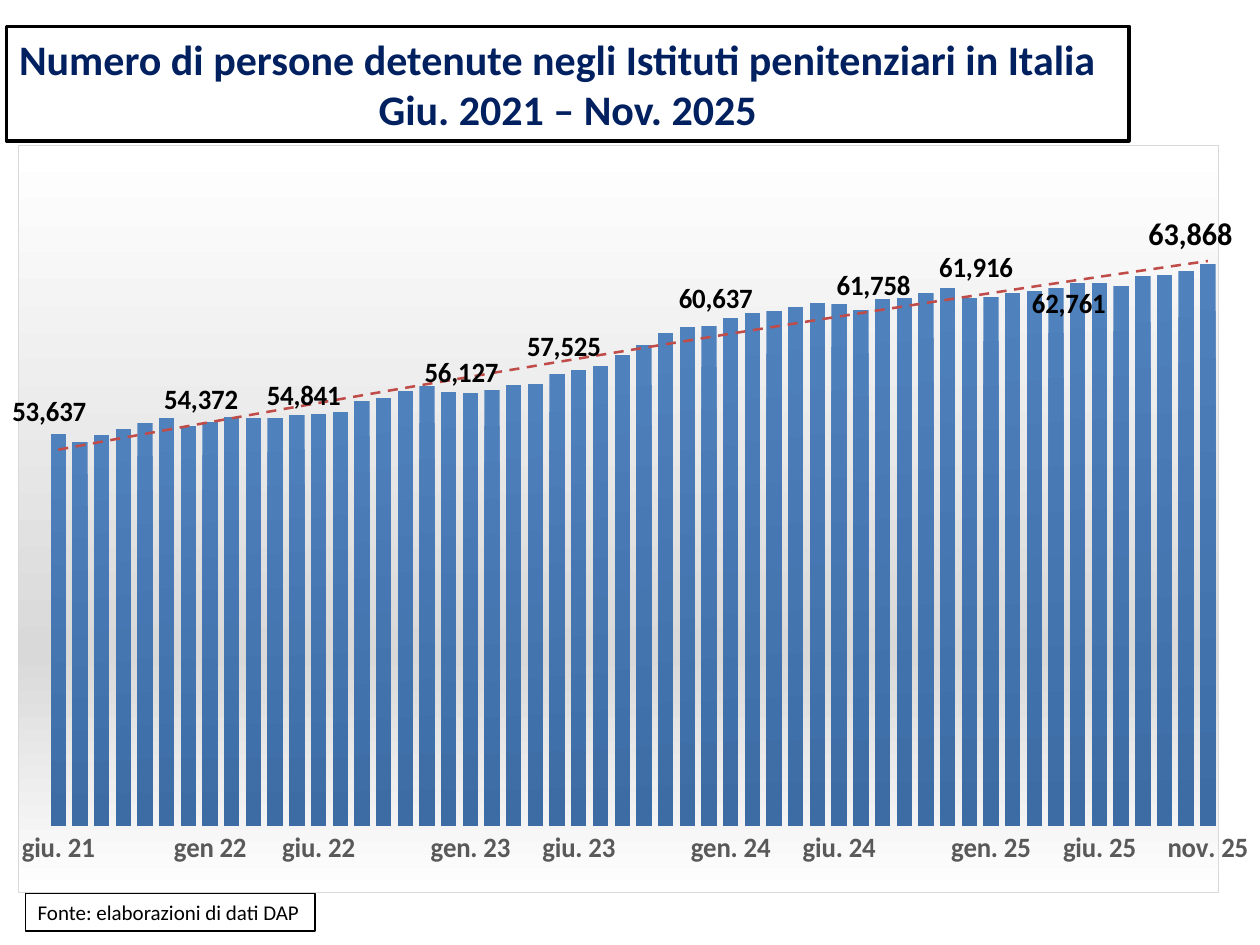
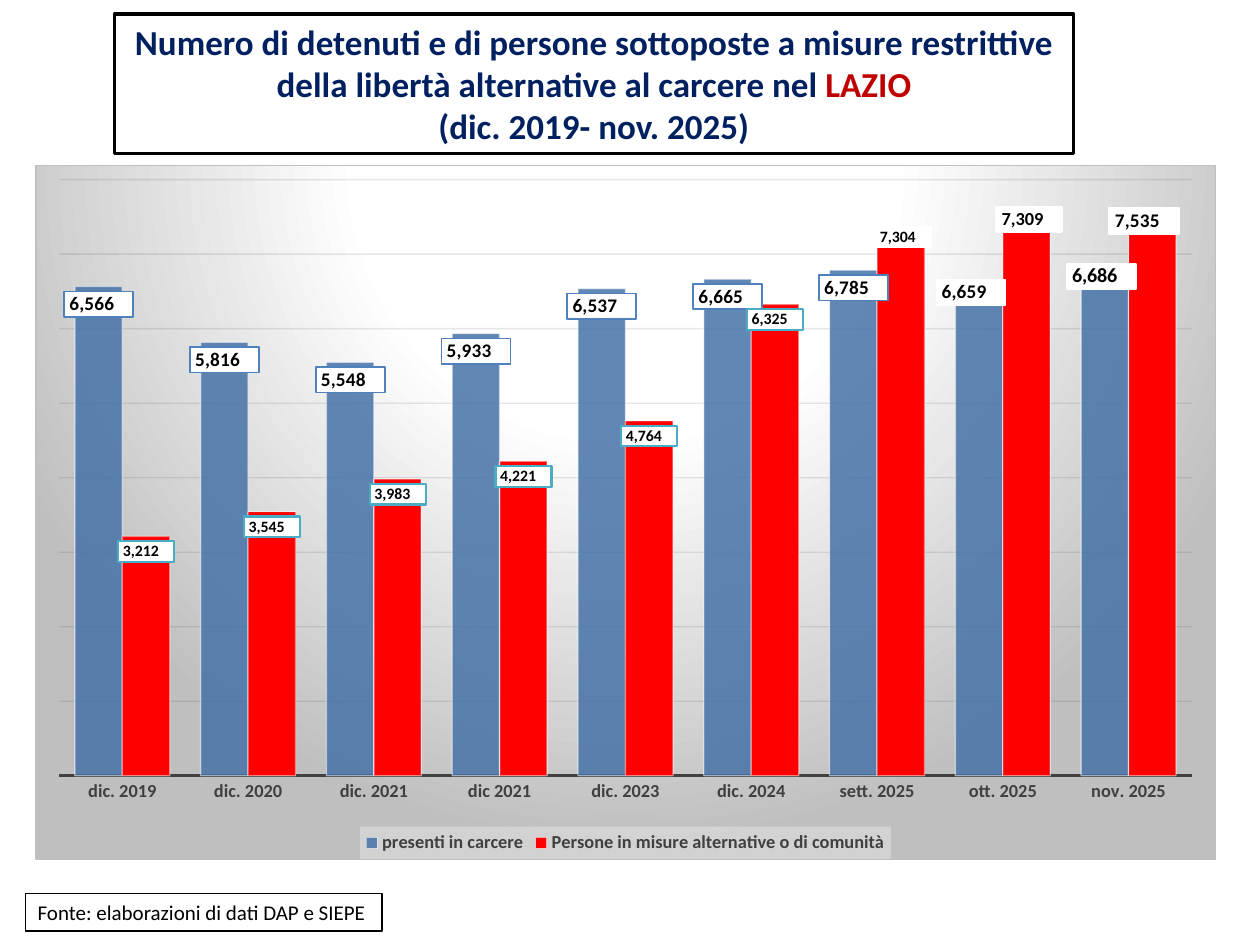
from pptx import Presentation
from pptx.chart.data import CategoryChartData
from pptx.dml.color import RGBColor
from pptx.enum.chart import XL_CHART_TYPE as ChartType
from pptx.enum.chart import XL_LABEL_POSITION as LabelPos
from pptx.enum.chart import XL_LEGEND_POSITION as LegendPos
from pptx.enum.chart import XL_TICK_MARK as TickMark
from pptx.enum.text import MSO_ANCHOR, MSO_AUTO_SIZE, PP_ALIGN
from pptx.oxml import parse_xml
from pptx.oxml.ns import nsdecls, qn
from pptx.oxml.xmlchemy import OxmlElement
from pptx.util import Cm, Pt

FONT = "Calibri"
NUMBER_FORMAT = r'_-* #,##0\ _€_-;\-* #,##0\ _€_-;_-* "-"?'
WHITE = RGBColor(0xFF, 0xFF, 0xFF)
BLACK = RGBColor(0, 0, 0)
NAVY = RGBColor(0x00, 0x20, 0x60)
DARK_RED = RGBColor(0xC0, 0x00, 0x00)
RED = RGBColor(0xFF, 0x00, 0x00)
TREND_RED = RGBColor(0xBF, 0x4C, 0x48)
BLUE = RGBColor(0x4F, 0x81, 0xBD)
DEEP_BLUE = RGBColor(0x3D, 0x6C, 0xA4)
STEEL_BLUE = RGBColor(0x46, 0x72, 0xA8)
TEAL = RGBColor(0x4B, 0xAC, 0xC6)
PALE_BLUE = RGBColor(0xC6, 0xD9, 0xF1)
ICE_BLUE = RGBColor(0xDC, 0xE6, 0xF2)
PALE_GREY = RGBColor(0xF2, 0xF2, 0xF2)
LIGHT_GREY = RGBColor(0xD9, 0xD9, 0xD9)
MID_GREY = RGBColor(0xBF, 0xBF, 0xBF)
AXIS_GREY = RGBColor(0x59, 0x59, 0x59)
DARK_GREY = RGBColor(0x40, 0x40, 0x40)
GRID_BLACK = RGBColor(0x0D, 0x0D, 0x0D)

ITALY_COUNTS = [
    53637, 53129, 53557, 53930, 54307, 54593, 54134, 54372, 54635, 54609, 54595,
    54771, 54841, 54979, 55637, 55835, 56225, 56524, 56196, 56127, 56319, 56605,
    56674, 57230, 57525, 57749, 58428, 58987, 59715, 60116, 60166, 60637, 60924,
    61049, 61297, 61547, 61480, 61133, 61758, 61862, 62110, 62464, 61861, 61916,
    62165, 62281, 62445, 62761, 62728, 62569, 63167, 63198, 63493, 63868,
]
ITALY_MONTHS = {
    0: "giu. 21", 7: "gen 22", 12: "giu. 22", 19: "gen. 23", 24: "giu. 23",
    31: "gen. 24", 36: "giu. 24", 43: "gen. 25", 48: "giu. 25", 53: "nov. 25",
}
ITALY_LABEL_SHIFTS = {
    0: (0, 0), 7: (0, 0), 12: (-0.005, 0.006), 19: (0, 0.004), 24: (-0.005, 0),
    31: (-0.005, 0.004), 38: (0, 0.012), 43: (-0.005, -0.008),
    47: (0, 0.059), 53: (-0.006, -0.008),
}
LAZIO_DATES = ["dic. 2019", "dic. 2020", "dic. 2021", "dic 2021", "dic. 2023",
               "dic. 2024", "sett. 2025", "ott. 2025", "nov. 2025"]
IN_PRISON = [6566, 5816, 5548, 5933, 6537, 6665, 6785, 6659, 6686]
ALTERNATIVE = [3212, 3545, 3983, 4221, 4764, 6325, 7304, 7309, 7535]


def solid(color, alpha=100):
    return (f'<a:solidFill><a:srgbClr val="{color}"><a:alpha val="{alpha * 1000}"/>'
            '</a:srgbClr></a:solidFill>')


def outline(color, width, alpha=100, dash="solid"):
    return (f'<a:ln w="{Pt(width)}">{solid(color, alpha)}'
            f'<a:prstDash val="{dash}"/></a:ln>')


def gradient(stops, direction='<a:lin ang="5400000" scaled="0"/>'):
    marks = "".join(f'<a:gs pos="{pos * 1000}"><a:srgbClr val="{color}"/></a:gs>'
                    for pos, color in stops)
    return f'<a:gradFill rotWithShape="1"><a:gsLst>{marks}</a:gsLst>{direction}</a:gradFill>'


def shape_props(*parts):
    return parse_xml(f'<c:spPr {nsdecls("c", "a")}>{"".join(parts)}</c:spPr>')


def set_font(font, size, color, bold=False):
    font.name = FONT
    font.size = Pt(size)
    font.bold = bold
    font.color.rgb = color


def place(shape, box):
    shape.left, shape.top, shape.width, shape.height = (Cm(length) for length in box)


def frame(shape, width):
    shape.fill.solid()
    shape.fill.fore_color.rgb = WHITE
    shape.line.color.rgb = BLACK
    shape.line.width = Pt(width)


def add_title(slide, box, lines, size):
    title = slide.shapes.title
    place(title, box)
    frame(title, 2)
    text = title.text_frame
    text.auto_size = MSO_AUTO_SIZE.NONE
    text.vertical_anchor = MSO_ANCHOR.MIDDLE
    for number, (align, runs) in enumerate(lines):
        line = text.paragraphs[0] if number == 0 else text.add_paragraph()
        line.alignment = align
        set_font(line.font, size, NAVY, True)
        for words, color in runs:
            run = line.add_run()
            run.text = words
            if color != NAVY:
                run.font.color.rgb = color


def add_source(slide, width, words):
    source = slide.shapes.add_textbox(Cm(0.51), Cm(18.01), Cm(width), Cm(0.76))
    frame(source, 0.75)
    source.text_frame.word_wrap = False
    source.text_frame.text = words
    set_font(source.text_frame.paragraphs[0].font, 12, BLACK)


def set_plot_layout(chart, x, y, w, h):
    plot_area = chart._chartSpace.find(qn("c:chart")).find(qn("c:plotArea"))
    for previous in plot_area.findall(qn("c:layout")):
        plot_area.remove(previous)
    plot_area.insert(0, parse_xml(
        f'<c:layout {nsdecls("c")}><c:manualLayout><c:layoutTarget val="inner"/>'
        '<c:xMode val="edge"/><c:yMode val="edge"/>'
        f'<c:x val="{x}"/><c:y val="{y}"/><c:w val="{w}"/><c:h val="{h}"/>'
        '</c:manualLayout></c:layout>'))


def add_columns(slide, box, categories, series, background, border, gap, limits, layout):
    data = CategoryChartData(number_format=NUMBER_FORMAT)
    data.categories = categories
    for name, values in series:
        data.add_series(name, values)
    chart = slide.shapes.add_chart(
        ChartType.COLUMN_CLUSTERED, *(Cm(length) for length in box), data).chart
    chart.has_title = False
    chart.has_legend = False
    set_font(chart.font, 11, BLACK)
    chart._chartSpace.find(qn("c:chart")).addnext(
        shape_props(background, outline(border, 0.75)))
    set_plot_layout(chart, *layout)
    plot = chart.plots[0]
    plot.gap_width = gap
    plot.overlap = 0
    plot.vary_by_categories = False
    counts = chart.value_axis
    counts.visible = False
    counts.has_major_gridlines = False
    counts.minimum_scale, counts.maximum_scale = limits
    return chart


def style_dates(axis, size, color):
    axis.major_tick_mark = axis.minor_tick_mark = TickMark.NONE
    set_font(axis.tick_labels.font, size, color, True)
    axis._element.find(qn("c:txPr")).find(qn("a:bodyPr")).set("rot", "-60000000")
    skip = OxmlElement("c:tickLblSkip")
    skip.set("val", "1")
    axis._element.find(qn("c:noMultiLvlLbl")).addprevious(skip)


def paint_series(series, *parts):
    series._element.find(qn("c:tx")).addnext(shape_props(*parts))


def label_point(series, index, shift, size, position, fill, border):
    label = series.points[index].data_label
    set_font(label.font, size, BLACK, True)
    label.position = position
    number_format = OxmlElement("c:numFmt")
    number_format.set("formatCode", NUMBER_FORMAT)
    number_format.set("sourceLinked", "0")
    moved = parse_xml(
        f'<c:layout {nsdecls("c")}><c:manualLayout><c:x val="{shift[0]}"/>'
        f'<c:y val="{shift[1]}"/></c:manualLayout></c:layout>')
    start = label._get_or_add_dLbl().find(qn("c:idx"))
    for part in (shape_props(solid(fill), border), number_format, moved):
        start.addnext(part)


def label_series(series, size, border):
    labels = series.data_labels
    labels.show_value = True
    labels.position = LabelPos.INSIDE_END
    set_font(labels.font, size, BLACK, True)
    labels.number_format = NUMBER_FORMAT
    labels.number_format_is_linked = False
    labels._element.find(qn("c:numFmt")).addnext(shape_props(solid(WHITE), border))


def add_trend(series):
    trend = parse_xml(
        f'<c:trendline {nsdecls("c", "a")}><c:spPr>'
        f'{outline(TREND_RED, 1.5, dash="dash")}</c:spPr>'
        '<c:trendlineType val="poly"/><c:order val="2"/>'
        '<c:dispRSqr val="0"/><c:dispEq val="0"/></c:trendline>')
    series._element.find(qn("c:cat")).addprevious(trend)


def add_italy_chart(slide, box):
    months = [ITALY_MONTHS.get(month, "") for month in range(len(ITALY_COUNTS))]
    background = gradient([(0, WHITE), (68, LIGHT_GREY), (100, WHITE)])
    chart = add_columns(slide, box, months, [("Series 1", ITALY_COUNTS)], background,
                        LIGHT_GREY, 41, (30000, 70000), (0.032, 0.023, 0.976, 0.888))
    style_dates(chart.category_axis, 16, AXIS_GREY)
    chart.category_axis.format.line.fill.background()
    detained = chart.plots[0].series[0]
    paint_series(detained, gradient([(0, BLUE), (100, DEEP_BLUE)]))
    detained.data_labels.show_value = False
    last = len(ITALY_COUNTS) - 1
    for month, shift in ITALY_LABEL_SHIFTS.items():
        size, fill = (18, PALE_BLUE) if month == last else (16, WHITE)
        label_point(detained, month, shift, size, LabelPos.OUTSIDE_END, fill,
                    outline(BLUE, 2))
    add_trend(detained)


def add_lazio_chart(slide, box):
    background = gradient(
        [(0, WHITE), (39, WHITE), (100, MID_GREY)],
        '<a:path path="circle"><a:fillToRect l="50000" t="-80000" r="50000" b="180000"/></a:path>')
    groups = [("presenti in carcere", IN_PRISON),
              ("Persone in misure alternative o di comunità", ALTERNATIVE)]
    chart = add_columns(slide, box, LAZIO_DATES, groups, background, MID_GREY, 65,
                        (0, 8000), (0.02, 0.02, 0.96, 0.86))
    style_dates(chart.category_axis, 10.5, DARK_GREY)
    chart.category_axis.format.line.color.rgb = DARK_GREY
    chart.category_axis.format.line.width = Pt(1.5)
    counts = chart.value_axis
    counts.major_unit = 1000
    counts.has_major_gridlines = True
    counts._element.find(qn("c:majorGridlines")).append(
        shape_props(outline(GRID_BLACK, 0.75, 10)))

    chart.has_legend = True
    legend = chart.legend
    legend.position = LegendPos.BOTTOM
    legend.include_in_layout = False
    set_font(legend.font, 10.5, DARK_GREY, True)
    legend._element.find(qn("c:overlay")).addnext(shape_props(solid(PALE_GREY, 39)))

    styles = [
        (STEEL_BLUE, 85, 11, outline(BLUE, 1),
         [(7, (-0.007, -0.007), 11, WHITE), (8, (-0.003, -0.027), 11.5, ICE_BLUE)]),
        (RED, 100, 9, outline(TEAL, 1.25),
         [(6, (0.002, -0.014), 9, WHITE), (7, (0.002, -0.042), 10.5, WHITE),
          (8, (-0.007, -0.016), 11, PALE_GREY)]),
    ]
    for group, (color, alpha, size, border, moved) in zip(chart.plots[0].series, styles):
        paint_series(group, solid(color, alpha), outline(WHITE, 0.75, 50))
        label_series(group, size, border)
        for index, shift, point_size, fill in moved:
            label_point(group, index, shift, point_size, LabelPos.INSIDE_END, fill, border)


def build_italy(slide):
    add_italy_chart(slide, (0.13, 2.92, 25.27, 15.09))
    add_title(slide, (0.13, 0.53, 22.63, 2.31), [
        (PP_ALIGN.LEFT,
         [("Numero di persone detenute negli Istituti penitenziari in Italia", NAVY)]),
        (PP_ALIGN.CENTER, [("Giu. 2021 – Nov. 2025", NAVY)]),
    ], 24)
    add_source(slide, 5.84, "Fonte: elaborazioni di dati DAP")


def build_lazio(slide):
    add_lazio_chart(slide, (0.71, 3.33, 23.8, 14))
    add_title(slide, (2.31, 0.28, 19.33, 2.82), [
        (PP_ALIGN.CENTER,
         [("Numero di detenuti e di persone sottoposte a misure restrittive "
           "della libertà alternative al carcere nel ", NAVY), ("LAZIO", DARK_RED)]),
        (PP_ALIGN.CENTER, [("(dic. 2019- nov. 2025)", NAVY)]),
    ], 20)
    add_source(slide, 7.19, "Fonte: elaborazioni di dati DAP e SIEPE")


def main():
    deck = Presentation()
    deck.slide_width, deck.slide_height = Cm(25.4), Cm(19.05)
    title_only = deck.slide_layouts[5]
    for build in (build_italy, build_lazio):
        build(deck.slides.add_slide(title_only))
    deck.save("out.pptx")


if __name__ == "__main__":
    main()
